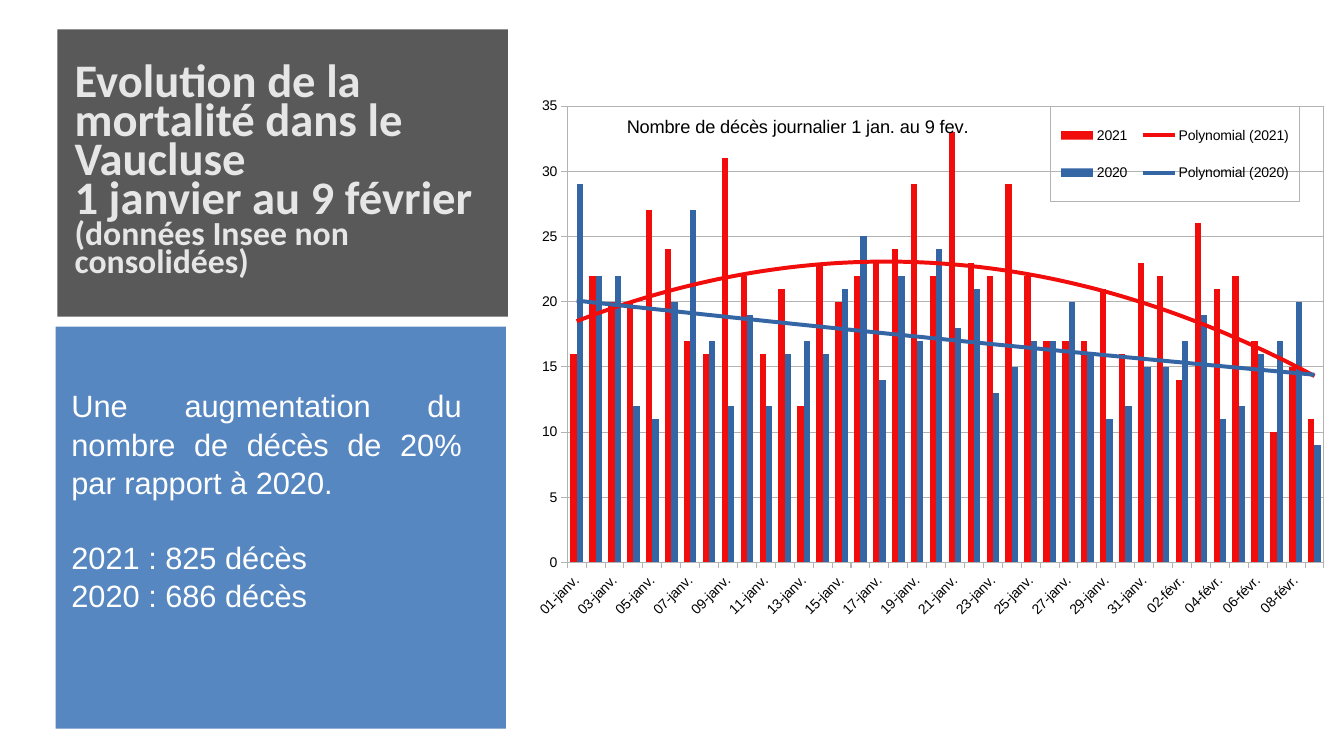
from dataclasses import dataclass

from lxml.etree import SubElement
from pptx import Presentation
from pptx.chart.data import CategoryChartData
from pptx.dml.color import RGBColor
from pptx.enum.chart import XL_CHART_TYPE, XL_LEGEND_POSITION, XL_TICK_MARK
from pptx.enum.shapes import MSO_SHAPE
from pptx.enum.text import MSO_ANCHOR, MSO_AUTO_SIZE, PP_ALIGN
from pptx.oxml import parse_xml
from pptx.oxml.ns import nsdecls, qn
from pptx.util import Cm, Pt


@dataclass(frozen=True)
class Theme:
    dark: str = "595959"
    blue: str = "4F81BD"
    title_text: str = "E7E6E6"
    white: str = "FFFFFF"
    black: str = "000000"
    grid: str = "B3B3B3"
    red_2021: str = "F10D0C"
    blue_2020: str = "3465A4"
    title_font: str = "Calibri"
    body_font: str = "Arial"
    title_size: float = 33.3
    subtitle_size: float = 24.1
    body_size: float = 22
    chart_title_size: float = 13
    chart_size: float = 10
    grid_width: float = 0.75
    trend_width: float = 2.83


T = Theme()

DAYS = [f"{d:02}-janv." for d in range(1, 32)] + [f"{d:02}-févr." for d in range(1, 10)]
DEATHS = {
    "2021": (T.red_2021, [
        16, 22, 20, 20, 27, 24, 17, 16, 31, 22, 16, 21, 12, 23, 20, 22, 23, 24, 29, 22,
        33, 23, 22, 29, 22, 17, 17, 17, 21, 16, 23, 22, 14, 26, 21, 22, 17, 10, 15, 11]),
    "2020": (T.blue_2020, [
        29, 22, 22, 12, 11, 20, 27, 17, 12, 19, 12, 16, 17, 16, 21, 25, 14, 22, 17, 24,
        18, 21, 13, 15, 17, 17, 20, 16, 11, 12, 15, 15, 17, 19, 11, 12, 16, 17, 20, 9]),
}


def style_font(font, name=T.body_font, size=T.chart_size, color=T.black, bold=False):
    font.name = name
    font.size = Pt(size)
    font.bold = bold
    font.color.rgb = RGBColor.from_string(color)


def write(p, text, align=PP_ALIGN.LEFT, spacing=1.0, before=0, **font):
    p.alignment = align
    p.line_spacing = spacing
    p.space_before = Pt(before)
    p.space_after = Pt(0)
    r = p.add_run()
    r.text = text
    style_font(r.font, **font)


def place(sp, left, top, width, height):
    sp.left, sp.top, sp.width, sp.height = Cm(left), Cm(top), Cm(width), Cm(height)


def add_panel(s, color, box, behind, alpha=None):
    sp = s.shapes.add_shape(MSO_SHAPE.RECTANGLE, *map(Cm, box))
    sp.shadow.inherit = False
    sp.fill.solid()
    sp.fill.fore_color.rgb = RGBColor.from_string(color)
    sp.line.fill.background()
    if alpha:
        clr = next(sp.element.iter(qn("a:srgbClr")))
        SubElement(clr, qn("a:alpha")).set("val", str(alpha * 1000))
    behind.element.addprevious(sp.element)


def prepare_frame(sp, anchor):
    tf = sp.text_frame
    tf.word_wrap = True
    tf.auto_size = MSO_AUTO_SIZE.NONE
    tf.vertical_anchor = anchor
    tf.margin_left = tf.margin_right = Cm(0.25)
    tf.margin_top = tf.margin_bottom = Cm(0.13)
    return tf


def fill_paragraphs(tf, items, **common):
    for i, (text, fmt) in enumerate(items):
        p = tf.paragraphs[0] if i == 0 else tf.add_paragraph()
        write(p, text, **{**common, **fmt})


def remove_bullets(tf):
    for p in tf.paragraphs:
        pPr = p._p.get_or_add_pPr()
        pPr.set("marL", "0")
        pPr.set("indent", "0")
        SubElement(pPr, qn("a:buNone"))


def line_xml(tag, color, width):
    return (f'<{tag} {nsdecls("c", "a")}><a:ln w="{Pt(width)}"><a:solidFill>'
            f'<a:srgbClr val="{color}"/></a:solidFill></a:ln></{tag}>')


def set_layout(parent, before, x, y, w=None, h=None, inner=False):
    for old in parent.findall(qn("c:layout")):
        parent.remove(old)
    layout = parse_xml(f'<c:layout {nsdecls("c")}><c:manualLayout/></c:layout>')
    values = [("layoutTarget", "inner" if inner else None), ("xMode", "edge"),
              ("yMode", "edge"), ("x", x), ("y", y), ("w", w), ("h", h)]
    for name, value in values:
        if value is not None:
            SubElement(layout[0], qn(f"c:{name}")).set("val", str(value))
    parent.find(qn(before)).addprevious(layout)


def add_trend(ser, name, color):
    trend = parse_xml(
        f'<c:trendline {nsdecls("c")}><c:name>Polynomial ({name})</c:name>'
        f'{line_xml("c:spPr", color, T.trend_width)}<c:trendlineType val="poly"/>'
        '<c:order val="2"/><c:dispRSqr val="0"/><c:dispEq val="0"/></c:trendline>')
    ser.find(qn("c:cat")).addprevious(trend)


def style_line(line):
    line.color.rgb = RGBColor.from_string(T.grid)
    line.width = Pt(T.grid_width)


def style_axes(chart):
    for axis in (chart.category_axis, chart.value_axis):
        axis.major_tick_mark = XL_TICK_MARK.OUTSIDE
        axis.minor_tick_mark = XL_TICK_MARK.NONE
        style_font(axis.tick_labels.font)
        style_line(axis.format.line)
    val = chart.value_axis
    val.minimum_scale, val.maximum_scale, val.major_unit = 0, 35, 5
    val.has_major_gridlines = True
    style_line(val.major_gridlines.format.line)
    cat = chart.element.find(".//" + qn("c:catAx"))
    cat.find(qn("c:txPr")).find(qn("a:bodyPr")).set("rot", "-2700000")
    skip = parse_xml(f'<c:tickLblSkip {nsdecls("c")} val="2"/>')
    cat.find(qn("c:noMultiLvlLbl")).addprevious(skip)


def add_deaths_chart(s):
    data = CategoryChartData()
    data.categories = DAYS
    for name, (_, values) in DEATHS.items():
        data.add_series(name, values)
    box = map(Cm, (13.28, 2.39, 20.29, 14.2))
    chart = s.shapes.add_chart(XL_CHART_TYPE.COLUMN_CLUSTERED, *box, data).chart
    style_font(chart.font)

    plot = chart.plots[0]
    plot.gap_width, plot.overlap = 100, 0
    plot.vary_by_categories = False
    sers = list(chart.element.iter(qn("c:ser")))
    for series, ser in zip(plot.series, sers):
        color = DEATHS[series.name][0]
        series.format.fill.solid()
        series.format.fill.fore_color.rgb = RGBColor.from_string(color)
        add_trend(ser, series.name, color)
    style_axes(chart)
    area = chart.element.find(".//" + qn("c:plotArea"))
    set_layout(area, "c:barChart", 0.05, 0.02, 0.94, 0.81, inner=True)
    area.append(parse_xml(line_xml("c:spPr", T.grid, T.grid_width)))

    chart.has_title = True
    write(chart.chart_title.text_frame.paragraphs[0],
          "Nombre de décès journalier 1 jan. au 9 fev.", size=T.chart_title_size)
    title = chart.element.find(".//" + qn("c:title"))
    title.find(qn("c:overlay")).set("val", "1")
    set_layout(title, "c:overlay", 0.12, 0.03)

    chart.has_legend = True
    chart.legend.position = XL_LEGEND_POSITION.RIGHT
    chart.legend.include_in_layout = False
    style_font(chart.legend.font)
    legend = chart.element.find(".//" + qn("c:legend"))
    set_layout(legend, "c:overlay", 0.65, 0.02, 0.31, 0.17)
    legend.find(qn("c:overlay")).addnext(
        parse_xml(line_xml("c:spPr", T.grid, T.grid_width)))


def main():
    prs = Presentation()
    prs.slide_width, prs.slide_height = Cm(33.87), Cm(19.05)
    s = prs.slides.add_slide(prs.slide_layouts[1])
    title, body = s.shapes.title, s.placeholders[1]

    add_panel(s, T.dark, (1.45, 0.74, 11.35, 7.24), title)
    place(title, 1.63, 1.27, 11.35, 6.15)
    fill_paragraphs(prepare_frame(title, MSO_ANCHOR.MIDDLE), [
        ("Evolution de la mortalité dans le Vaucluse", {}),
        ("1 janvier au 9 février", {}),
        ("(données Insee non consolidées)", {"size": T.subtitle_size}),
    ], spacing=0.7, name=T.title_font, size=T.title_size, color=T.title_text, bold=True)

    add_panel(s, T.blue, (1.4, 8.23, 11.35, 10.13), body, alpha=95)
    place(body, 1.55, 9.58, 10.34, 5.6)
    tf = prepare_frame(body, MSO_ANCHOR.TOP)
    fill_paragraphs(tf, [
        ("Une augmentation du nombre de décès de 20% par rapport à 2020.", {}),
        ("2021 : 825 décès", {"before": 26}),
        ("2020 : 686 décès", {}),
    ], align=PP_ALIGN.JUSTIFY, spacing=1.04, size=T.body_size, color=T.white)
    remove_bullets(tf)

    add_deaths_chart(s)
    prs.save("out.pptx")


if __name__ == "__main__":
    main()
